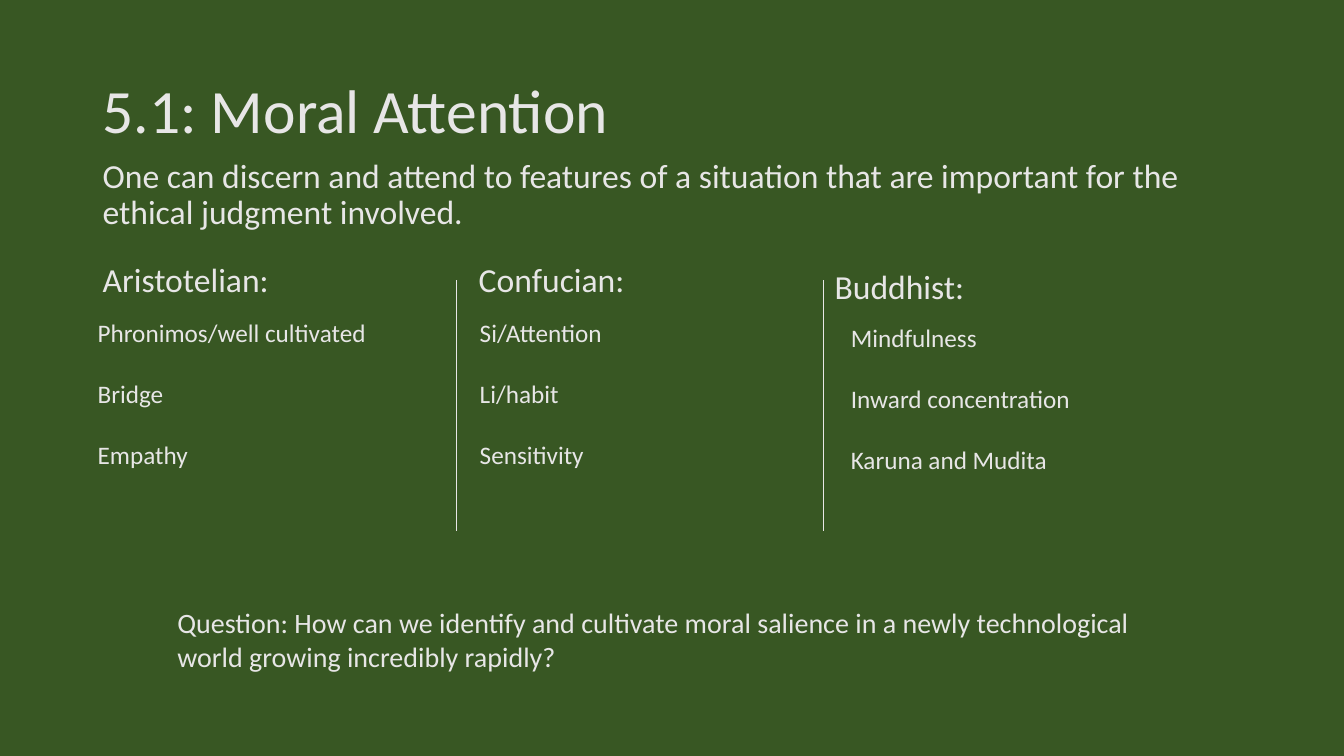
from lxml import etree
from pptx import Presentation
from pptx.dml.color import RGBColor
from pptx.enum.shapes import MSO_CONNECTOR
from pptx.enum.text import MSO_ANCHOR
from pptx.oxml.ns import qn
from pptx.util import Inches, Pt

GREEN = "385723"
LIGHT = "E7E6E6"


def color(hex_string):
    return RGBColor.from_string(hex_string)


def add_text(lines, left, top, width, height, size=18, wrap=False,
             anchor=MSO_ANCHOR.TOP, line_spacing=1.0, gap=0):
    """Add a text box with one paragraph per line, gap points apart."""
    box = slide.shapes.add_textbox(Inches(left), Inches(top), Inches(width), Inches(height))
    frame = box.text_frame
    frame.word_wrap = wrap
    frame.vertical_anchor = anchor
    frame.text = "\n".join(lines)
    for index, paragraph in enumerate(frame.paragraphs):
        paragraph.line_spacing = line_spacing
        paragraph.space_before = Pt(gap if index else 0)
        font = paragraph.runs[0].font
        font.name = "Calibri"
        font.size = Pt(size)
        font.color.rgb = color(LIGHT)


presentation = Presentation()
presentation.slide_width = Inches(13.33)
presentation.slide_height = Inches(7.5)
slide = presentation.slides.add_slide(presentation.slide_layouts[6])
slide.background.fill.solid()
slide.background.fill.fore_color.rgb = color(GREEN)

add_text(["5.1: Moral Attention"], 0.92, 0.4, 11.5, 1.45, size=44, wrap=True,
         anchor=MSO_ANCHOR.MIDDLE, line_spacing=0.9)
add_text(["One can discern and attend to features of a situation that are important "
          "for the ethical judgment involved."],
         0.92, 1.53, 11.5, 0.99, size=24, wrap=True, line_spacing=0.9)

# Heading with its left, top, width; then items with theirs
traditions = [
    ("Aristotelian:", 0.92, 2.52, 1.94,
     ["Phronimos/well cultivated", "Bridge", "Empathy"], 0.87, 3.1, 2.89),
    ("Confucian:", 4.65, 2.52, 1.74,
     ["Si/Attention", "Li/habit", "Sensitivity"], 4.66, 3.1, 1.43),
    ("Buddhist:", 8.18, 2.59, 1.5,
     ["Mindfulness", "Inward concentration", "Karuna and Mudita"], 8.34, 3.15, 2.4),
]
for heading, left, top, width, items, items_left, items_top, items_width in traditions:
    add_text([heading], left, top, width, 0.5, size=24)
    add_text(items, items_left, items_top, items_width, 1.62, gap=22)

for x in (4.53, 8.17):
    divider = slide.shapes.add_connector(
        MSO_CONNECTOR.STRAIGHT, Inches(x), Inches(2.78), Inches(x), Inches(5.27))
    divider.line.color.rgb = color(LIGHT)
    divider.line.width = Pt(0.5)
    etree.SubElement(divider.element.spPr, qn("a:effectLst"))

add_text(["Question: How can we identify and cultivate moral salience in a newly "
          "technological world growing incredibly rapidly?"],
         1.66, 5.96, 9.69, 0.77, size=20, wrap=True)

presentation.save("out.pptx")
